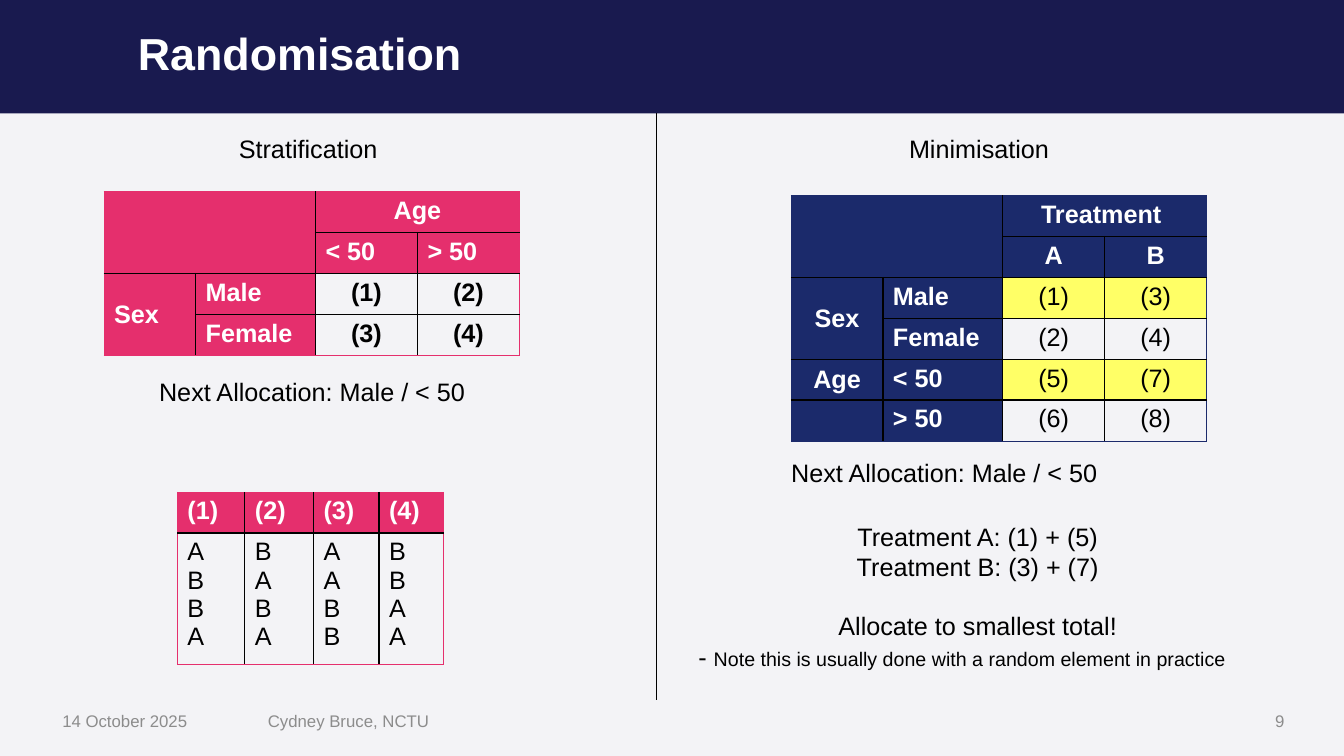
from itertools import chain, product

from lxml import etree
from pptx import Presentation
from pptx.dml.color import RGBColor
from pptx.enum.shapes import MSO_CONNECTOR, MSO_SHAPE
from pptx.enum.text import MSO_ANCHOR, MSO_AUTO_SIZE, PP_ALIGN
from pptx.oxml.ns import qn
from pptx.util import Cm, Pt

STRAIGHT = MSO_CONNECTOR.STRAIGHT
RECTANGLE = MSO_SHAPE.RECTANGLE
TOP, MIDDLE = MSO_ANCHOR.TOP, MSO_ANCHOR.MIDDLE
LEFT, CENTER, RIGHT = PP_ALIGN.LEFT, PP_ALIGN.CENTER, PP_ALIGN.RIGHT
NO_AUTOFIT = MSO_AUTO_SIZE.NONE

MIDNIGHT = RGBColor(0x19, 0x1A, 0x4F)
PALE = RGBColor(0xF3, 0xF3, 0xF6)
PINK = RGBColor(0xE5, 0x2F, 0x6D)
NAVY = RGBColor(0x1B, 0x2A, 0x6B)
YELLOW = RGBColor(0xFF, 0xFF, 0x66)
GREY = RGBColor(0x8C, 0x8C, 0x8C)
BLACK = RGBColor(0, 0, 0)
WHITE = RGBColor(0xFF, 0xFF, 0xFF)

PAGE_WIDTH, BANNER_HEIGHT = 33.87, 2.86
ROW_HEIGHT = 1.03
GRID_COLUMNS = [2.31, 3.02, 2.57, 2.57]
NEXT_ALLOCATION = "Next Allocation: Male / < 50"


def apply(target, values):
    for name, value in values.items():
        setattr(target, name, value)


class SlideBuilder:
    font = "Arial"
    size = 18

    def __init__(self, deck):
        self.page = deck.slides.add_slide(deck.slide_layouts[5])
        self.shapes = self.page.shapes

    def background(self, color):
        fill = self.page.background.fill
        fill.solid()
        fill.fore_color.rgb = color

    def fill_frame(self, frame, paras, color=BLACK, bold=False, size=None,
                   align=LEFT, para_format=None):
        """Fill a frame; a paragraph is a string or a list of (text, size) spans."""
        for index, spans in enumerate(paras):
            para = frame.paragraphs[0] if index == 0 else frame.add_paragraph()
            apply(para, {"alignment": align, **(para_format or {})})
            if isinstance(spans, str):
                spans = [(spans, size or self.size)]
            for text, points in spans:
                span = para.add_run()
                span.text = text
                apply(span.font, {"name": self.font, "size": Pt(points), "bold": bold})
                span.font.color.rgb = color

    def text(self, left, top, width, height, paras, anchor=TOP, **style):
        box = self.shapes.add_textbox(Cm(left), Cm(top), Cm(width), Cm(height))
        apply(box.text_frame, {"word_wrap": True, "vertical_anchor": anchor})
        self.fill_frame(box.text_frame, paras, **style)
        return box.text_frame

    def title(self, left, top, width, height, text):
        box = self.shapes.title
        apply(box, {"left": Cm(left), "top": Cm(top),
                    "width": Cm(width), "height": Cm(height)})
        apply(box.text_frame, {"auto_size": NO_AUTOFIT, "vertical_anchor": MIDDLE,
                               "word_wrap": True})
        self.fill_frame(box.text_frame, [text], color=WHITE, bold=True, size=32,
                        para_format={"line_spacing": 0.9})

    def banner(self, width, height, color):
        """Draw a band across the top, behind the title."""
        band = self.shapes.add_shape(RECTANGLE, 0, 0, Cm(width), Cm(height))
        band.shadow.inherit = False
        band.fill.solid()
        band.fill.fore_color.rgb = color
        band.line.fill.background()
        self.shapes.title._element.addprevious(band._element)

    def divider(self, x, top, bottom):
        line = self.shapes.add_connector(STRAIGHT, Cm(x), Cm(top), Cm(x), Cm(bottom))
        line.line.color.rgb = BLACK
        line.line.width = Pt(0.5)
        etree.SubElement(line._element.spPr, qn("a:effectLst"))

    def borders(self, cell, outer_sides, accent):
        """Draw outer sides thin in the accent colour and inner ones black."""
        properties = cell._tc.get_or_add_tcPr()
        for side, outer in outer_sides.items():
            color, points = (accent, 0.5) if outer else (BLACK, 1)
            line = etree.SubElement(properties, qn(f"a:ln{side}"), w=str(Pt(points)))
            fill = etree.SubElement(line, qn("a:solidFill"))
            etree.SubElement(fill, qn("a:srgbClr"), val=str(color))

    def table(self, left, top, widths, heights, texts, accent, left_words,
              head_rows=2, head_columns=2, merges=(), bold_body=False,
              highlighted_rows=()):
        row_count, column_count = len(heights), len(widths)
        table = self.shapes.add_table(row_count, column_count, Cm(left), Cm(top),
                                      Cm(sum(widths)), Cm(sum(heights))).table
        apply(table, {"first_row": False, "horz_banding": False})
        for column, width in zip(table.columns, widths):
            column.width = Cm(width)
        for row, height in zip(table.rows, heights):
            row.height = Cm(height)
        for first, last in merges:
            table.cell(*first).merge(table.cell(*last))

        for row, column in product(range(row_count), range(column_count)):
            cell = table.cell(row, column)
            origin = cell.is_merge_origin
            last_row = row + (cell.span_height if origin else 1)
            last_column = column + (cell.span_width if origin else 1)
            self.borders(cell, {"L": column == 0, "R": last_column == column_count,
                                "T": row == 0, "B": last_row == row_count}, accent)
            head = row < head_rows or column < head_columns
            color = accent if head else YELLOW if row in highlighted_rows else None
            if color is None:
                cell.fill.background()
            else:
                cell.fill.solid()
                cell.fill.fore_color.rgb = color
            if column == 0 and head_columns:
                cell.vertical_anchor = MIDDLE
            text = texts[row][column]
            if text:
                self.fill_frame(cell.text_frame, text.split("\n"),
                                color=WHITE if head else BLACK, bold=head or bold_body,
                                align=LEFT if text in left_words else CENTER)


def main():
    deck = Presentation()
    deck.slide_width, deck.slide_height = Cm(PAGE_WIDTH), Cm(19.05)
    slide = SlideBuilder(deck)
    slide.background(PALE)
    slide.banner(PAGE_WIDTH, BANNER_HEIGHT, MIDNIGHT)
    slide.title(3.22, -0.02, 29.39, BANNER_HEIGHT, "Randomisation")
    slide.divider(16.54, BANNER_HEIGHT, 17.65)

    for left, width, text, align in [(1.32, 4.47, "14 October 2025", LEFT),
                                     (6.5, 9.63, "Cydney Bruce, NCTU", LEFT),
                                     (24.53, 8.09, "9", RIGHT)]:
        slide.text(left, 17.66, width, 1.02, [text], anchor=MIDDLE,
                   color=GREY, size=12, align=align)

    for left, top, width, text in [(5.77, 3.23, 4.22, "Stratification"),
                                   (22.66, 3.23, 5.49, "Minimisation"),
                                   (3.76, 9.37, 8.38, NEXT_ALLOCATION),
                                   (19.69, 11.4, 8.38, NEXT_ALLOCATION)]:
        slide.text(left, top, width, ROW_HEIGHT, [text])

    row_labels = {"Male", "Female", "< 50", "> 50"}
    grid_merges = [((0, 0), (1, 1)), ((0, 2), (0, 3)), ((2, 0), (3, 0))]
    strata = [["", "", "Age", ""],
              ["", "", "< 50", "> 50"],
              ["Sex", "Male", "(1)", "(2)"],
              ["", "Female", "(3)", "(4)"]]
    slide.table(2.62, 4.83, GRID_COLUMNS, [ROW_HEIGHT] * 4, strata, PINK,
                row_labels | {"Sex"}, merges=grid_merges, bold_body=True)

    totals = [["", "", "Treatment ", ""],
              ["", "", "A", "B"],
              ["Sex", "Male", "(1)", "(3)"],
              ["", "Female", "(2)", "(4)"],
              ["Age", "< 50", "(5)", "(7)"],
              ["", "> 50", "(6)", "(8)"]]
    slide.table(19.94, 4.93, GRID_COLUMNS, [ROW_HEIGHT] * 6, totals, NAVY,
                row_labels, merges=grid_merges, highlighted_rows=(2, 4))

    sequences = [["(1)", "(2)", "(3)", "(4)"],
                 ["\n".join(block) for block in ("ABBA", "BABA", "AABB", "BBAA")]]
    slide.table(4.47, 12.4, [1.7, 1.73, 1.65, 1.63], [ROW_HEIGHT, 3.3], sequences,
                PINK, set(chain(*sequences)), head_rows=1, head_columns=0)

    note = [("- ", 18), ("Note this is usually done with a random element in practice", 14)]
    steps = slide.text(17.35, 13, 14.58, 4.11,
                       ["Treatment A: (1) + (5)", "Treatment B: (3) + (7)",
                        "Allocate to smallest total!", note], align=CENTER)
    steps.paragraphs[2].space_before = Pt(21)
    steps.paragraphs[3].alignment = LEFT

    deck.save("out.pptx")


if __name__ == "__main__":
    main()
